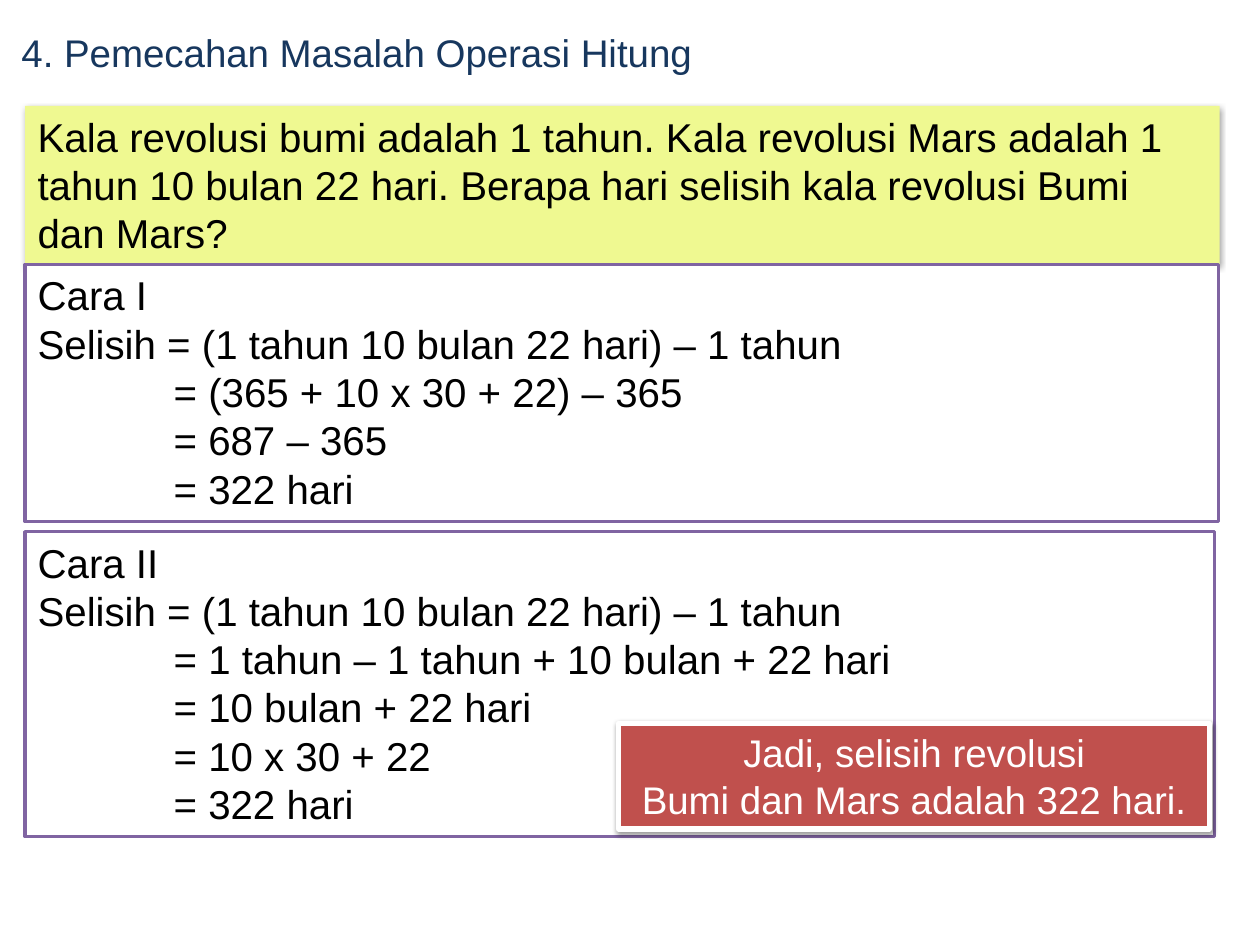
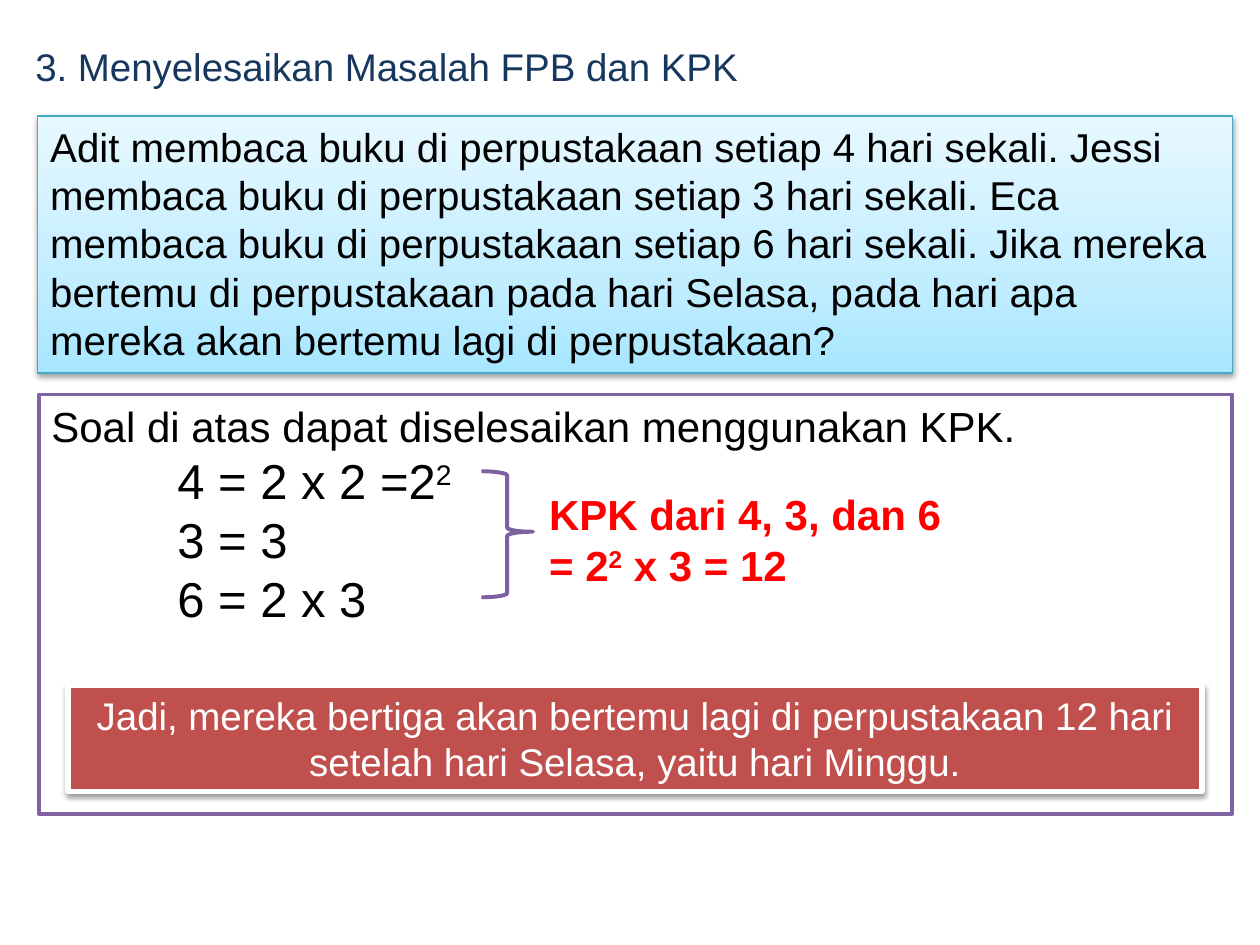
from copy import deepcopy

from lxml.etree import SubElement
from pptx import Presentation
from pptx.dml.color import RGBColor
from pptx.enum.shapes import MSO_SHAPE
from pptx.enum.text import MSO_ANCHOR, MSO_AUTO_SIZE, PP_ALIGN
from pptx.oxml.ns import qn
from pptx.util import Inches, Pt

FONT = "Arial"
NAVY = RGBColor(0x17, 0x37, 0x5E)
BLACK = RGBColor(0, 0, 0)
WHITE = RGBColor(0xFF, 0xFF, 0xFF)
RED = RGBColor(0xFF, 0, 0)
LIME = RGBColor(0xEF, 0xF9, 0x91)
PURPLE = RGBColor(0x80, 0x64, 0xA2)
BRACE_PURPLE = RGBColor(0x7D, 0x60, 0xA0)
BRICK = RGBColor(0xC0, 0x50, 0x4D)
TEAL = RGBColor(0x46, 0xAA, 0xC5)
SKY = [(0, RGBColor(0xA7, 0xE6, 0xFF)), (0.35, RGBColor(0xC1, 0xED, 0xFF)),
       (1, RGBColor(0xE7, 0xF8, 0xFF))]

# Content: a paragraph is (indent, size, runs); a run in a tuple is superscript
STEP = 1.08      # indent that lines up the equals signs
FACTOR = 1.0     # indent of the factorisations
SQUARED = ("2",)

REVOLUTION = {
    "title": "4. Pemecahan Masalah Operasi Hitung",
    "question": "Kala revolusi bumi adalah 1 tahun. Kala revolusi Mars adalah 1 tahun "
                "10 bulan 22 hari. Berapa hari selisih kala revolusi Bumi dan Mars?",
    "methods": [
        ("Cara I", ["= (365 + 10 x 30 + 22) – 365", "= 687 – 365", "= 322 hari"]),
        ("Cara II", ["= 1 tahun – 1 tahun + 10 bulan + 22 hari", "= 10 bulan + 22 hari",
                     "= 10 x 30 + 22", "= 322 hari"]),
    ],
    "difference": "Selisih = (1 tahun 10 bulan 22 hari) – 1 tahun",
    "conclusion": ["Jadi, selisih revolusi", "Bumi dan Mars adalah 322 hari."],
}
LIBRARY = {
    "title": "3. Menyelesaikan Masalah FPB dan KPK",
    "question": "Adit membaca buku di perpustakaan setiap 4 hari sekali. Jessi membaca buku di "
                "perpustakaan setiap 3 hari sekali. Eca membaca buku di perpustakaan setiap 6 "
                "hari sekali. Jika mereka bertemu di perpustakaan pada hari Selasa, pada hari "
                "apa mereka akan bertemu lagi di perpustakaan?",
    "solution": [
        (0, 24, ["Soal di atas dapat diselesaikan menggunakan KPK."]),
        (FACTOR, 28, ["4 = 2 x 2 =2", SQUARED]),
        (FACTOR, 28, ["3 = 3"]),
        (FACTOR, 28, ["6 = 2 x 3"]),
    ],
    "multiple": [(0, 24, ["KPK dari 4, 3, dan 6"]), (0, 24, ["= 2", SQUARED, " x 3 = 12"])],
    "conclusion": ["Jadi, mereka bertiga akan bertemu lagi di perpustakaan 12 hari setelah "
                   "hari Selasa, yaitu hari Minggu."],
}


def write(shape, paragraphs, color=BLACK, align=PP_ALIGN.LEFT, bold=False):
    frame = shape.text_frame
    frame.word_wrap = True
    frame.auto_size = MSO_AUTO_SIZE.NONE
    frame.vertical_anchor = MSO_ANCHOR.TOP
    for number, (indent, size, runs) in enumerate(paragraphs):
        paragraph = frame.add_paragraph() if number else frame.paragraphs[0]
        paragraph.alignment = align
        if indent:
            paragraph._p.get_or_add_pPr().set("marL", str(Inches(indent)))
        for part in runs:
            run = paragraph.add_run()
            run.text = part[0] if isinstance(part, tuple) else part
            font = run.font
            font.name, font.size, font.bold = FONT, Pt(size), bold
            font.color.rgb = color
            if isinstance(part, tuple):
                run._r.get_or_add_rPr().set("baseline", "30000")


def fill_sky(fill):
    fill.gradient()
    fill.gradient_angle = 90
    stops = fill._xPr.find(".//" + qn("a:gsLst"))
    stops.append(deepcopy(stops[-1]))
    for stop, (position, color) in zip(fill.gradient_stops, SKY):
        stop.position = position
        stop.color.rgb = color


def drop_shadow(shape):
    effects = shape._element.spPr.find(qn("a:effectLst"))
    shadow = SubElement(effects, qn("a:outerShdw"), blurRad=str(Pt(3.1)), dist=str(Pt(1.6)),
                        dir="5400000", rotWithShape="0")
    black = SubElement(shadow, qn("a:srgbClr"), val="000000")
    SubElement(black, qn("a:alpha"), val="38000")


def add_box(slide, place, fill=None, line=None, width=0.0, shadow=False, kind=MSO_SHAPE.RECTANGLE):
    box = slide.shapes.add_shape(kind, *map(Inches, place))
    box.shadow.inherit = False
    if fill is SKY:
        fill_sky(box.fill)
    elif fill is None:
        box.fill.background()
    else:
        box.fill.solid()
        box.fill.fore_color.rgb = fill
    if line is None:
        box.line.fill.background()
    else:
        box.line.color.rgb = line
        box.line.width = Pt(width)
    if shadow:
        drop_shadow(box)
    return box


def add_question(slide, place, question, fill, line=None):
    box = add_box(slide, place, fill, line, 0.75, shadow=True)
    write(box, [(0, 23, [question])])


def add_solution(slide, place, paragraphs):
    write(add_box(slide, place, WHITE, PURPLE, 2), paragraphs)


def add_conclusion(slide, place, lines):
    box = add_box(slide, place, BRICK, WHITE, 3, shadow=True)
    write(box, [(0, 22, [line]) for line in lines], WHITE, PP_ALIGN.CENTER)


def start_slide(deck, title, left, top):
    slide = deck.slides.add_slide(deck.slide_layouts[5])
    heading = slide.shapes.title
    heading.left, heading.top = Inches(left), Inches(top)
    heading.width, heading.height = Inches(9), Inches(0.47)
    write(heading, [(0, 22, [title])], NAVY)
    return slide


def build_revolution(deck):
    content = REVOLUTION
    slide = start_slide(deck, content["title"], 0.07, 0.18)
    add_question(slide, (0.2, 0.84, 9.48, 1.26), content["question"], LIME)
    # The two ways of working it out
    places = [(0.2, 2.1, 9.47, 2.04), (0.2, 4.22, 9.44, 2.42)]
    for place, (method, steps) in zip(places, content["methods"]):
        opening = [(0, 23, [method]), (0, 23, [content["difference"]])]
        add_solution(slide, place, opening + [(STEP, 23, [step]) for step in steps])
    add_conclusion(slide, (4.91, 5.74, 4.69, 0.84), content["conclusion"])


def build_library(deck):
    content = LIBRARY
    slide = start_slide(deck, content["title"], 0.18, 0.29)
    add_question(slide, (0.3, 0.92, 9.48, 2.04), content["question"], SKY, TEAL)
    add_solution(slide, (0.31, 3.13, 9.47, 3.33), content["solution"])
    # Brace gathering the factors into the common multiple
    brace = add_box(slide, (3.82, 3.74, 0.41, 1), None, BRACE_PURPLE, 2.25,
                    kind=MSO_SHAPE.LEFT_BRACE)
    brace.rotation = 180
    brace.adjustments[0], brace.adjustments[1] = 0.08, 0.52
    multiple = slide.shapes.add_textbox(*map(Inches, (4.26, 3.83, 3.71, 0.91)))
    write(multiple, content["multiple"], RED, bold=True)
    add_conclusion(slide, (0.54, 5.44, 9, 0.84), content["conclusion"])


def main():
    deck = Presentation()
    deck.slide_width, deck.slide_height = Inches(10), Inches(7.5)
    build_revolution(deck)
    build_library(deck)
    deck.save("out.pptx")


if __name__ == "__main__":
    main()
